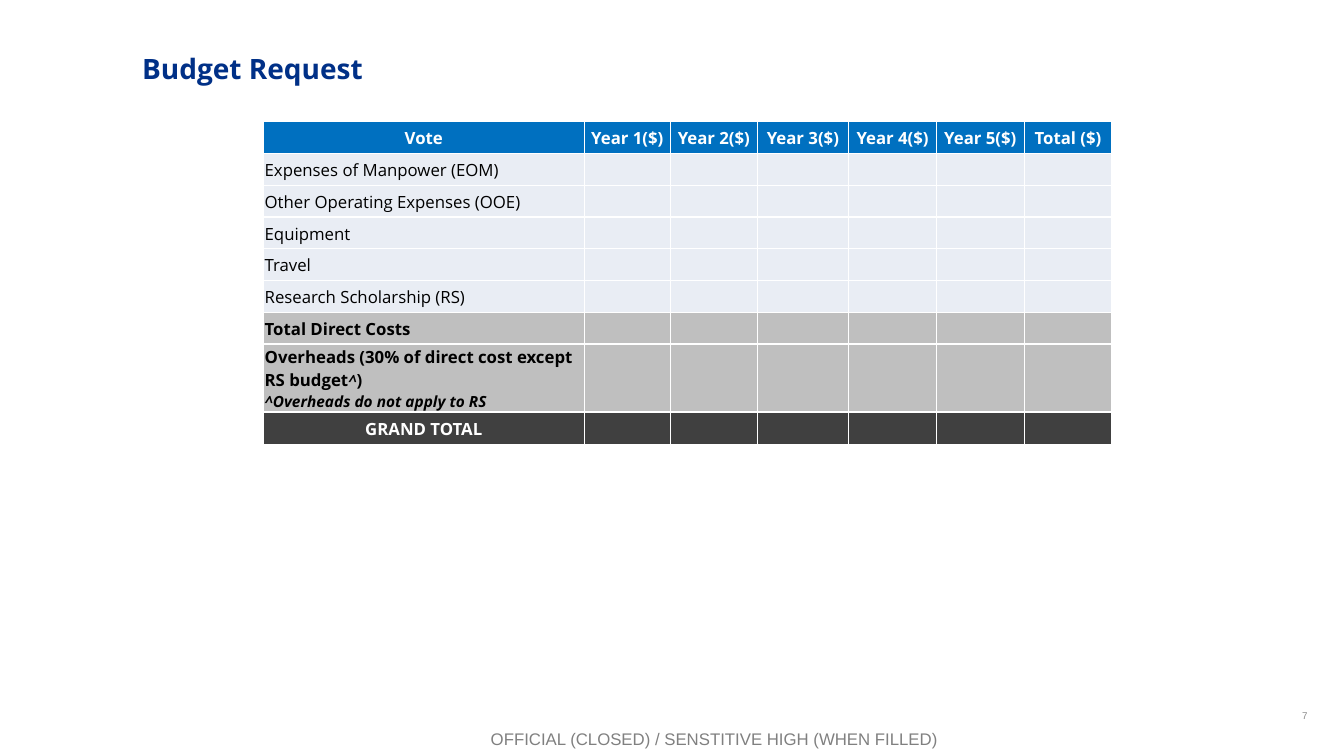
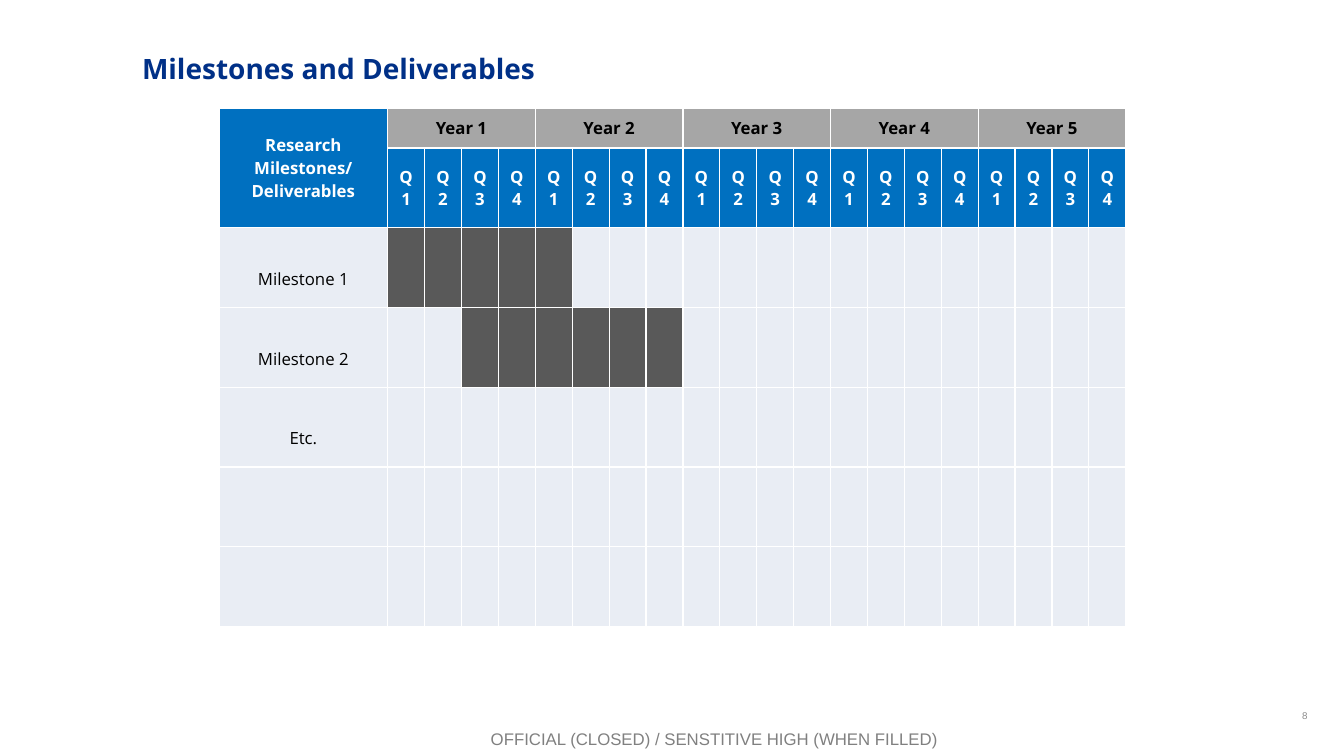
from lxml.etree import SubElement
from pptx import Presentation
from pptx.dml.color import RGBColor
from pptx.enum.text import MSO_ANCHOR as ANCHOR, PP_ALIGN as ALIGN
from pptx.oxml.ns import qn
from pptx.util import Cm, Pt

HEAD_FONT, FOOT_FONT = "Open Sans", "Arial"
WHITE, BLACK, NAVY, BLUE = "FFFFFF", "000000", "003087", "0070C0"
PALE, SILVER, GREY, CHARCOAL, BAR = "E9EDF4", "BFBFBF", "A6A6A6", "404040", "595959"
FOOT_GREY, NUMBER_GREY = "808080", "8C8C8C"
FOOTER = "OFFICIAL (CLOSED) / SENSTITIVE HIGH (WHEN FILLED)"

BUDGET_HEADS = ["Vote"] + [f"Year {n}($)" for n in range(1, 6)] + ["Total ($)"]
BUDGET_COLS = [8.08, 2.18, 2.18, 2.31, 2.21, 2.21, 2.21]
VOTES = [
    "Expenses of Manpower (EOM)",
    "Other Operating Expenses (OOE)",
    "Equipment",
    "Travel",
    "Research Scholarship (RS)",
]
OVERHEADS = [
    [("Overheads (30% of direct cost except RS budget", 12, False), ("^", 11, True), (")", 12, False)],
    [("^Overheads do not apply to RS", 11, True)],
]
BUDGET_ROWS = [(v, PALE, BLACK, False, ALIGN.LEFT, 0.8) for v in VOTES] + [
    ("Total Direct Costs", SILVER, BLACK, True, ALIGN.LEFT, 0.8),
    (OVERHEADS, SILVER, BLACK, True, ALIGN.LEFT, 1.71),
    ("GRAND TOTAL", CHARCOAL, WHITE, True, ALIGN.CENTER, 0.83),
]
BUDGET_INSETS = (0.03, 0.03, 0.03, 0)

YEARS, QUARTERS = 5, 4
PLAN_HEADS = ["Research", "Milestones/", "Deliverables"]
MILESTONES = [
    ("Milestone 1", range(1, 6)),
    ("Milestone 2", range(3, 9)),
    ("Etc.", ()),
    ("", ()),
    ("", ()),
]
PLAN_INSETS = (0.18, 0, 0.18, 0)
MILESTONE_INSETS = (0.18, 0.57, 0.18, 0)


def rgb(value):
    return RGBColor.from_string(value)


def style(font, size, color, bold=False, name=HEAD_FONT):
    font.name, font.size, font.bold = name, Pt(size), bold
    font.color.rgb = rgb(color)


def add_text(s, box, text, size, color, name, align=ALIGN.LEFT, bold=False, anchor=ANCHOR.TOP):
    tf = s.shapes.add_textbox(*map(Cm, box)).text_frame
    tf.word_wrap, tf.vertical_anchor = True, anchor
    p = tf.paragraphs[0]
    p.text, p.alignment = text, align
    style(p.font, size, color, bold, name)
    return p


def add_slide(prs, title, number):
    s = prs.slides.add_slide(prs.slide_layouts[6])
    add_text(s, (25.3, 17.53, 7.9, 1.02), str(number), 7, NUMBER_GREY, FOOT_FONT,
             ALIGN.RIGHT, anchor=ANCHOR.MIDDLE)
    add_text(s, (3.33, 1.27, 29.34, 1.47), title, 20, NAVY, HEAD_FONT, bold=True).line_spacing = 0.9
    add_text(s, (6.6, 18.24, 22.81, 0.76), FOOTER, 12, FOOT_GREY, FOOT_FONT, ALIGN.CENTER)
    return s


def add_grid(s, left, top, widths, heights):
    table = s.shapes.add_table(len(heights), len(widths), Cm(left), Cm(top),
                               Cm(sum(widths)), Cm(sum(heights))).table
    for col, width in zip(table.columns, widths):
        col.width = Cm(width)
    for row, height in zip(table.rows, heights):
        row.height = Cm(height)
    for cell in table.iter_cells():
        tc_pr = cell._tc.get_or_add_tcPr()
        for side in ("lnL", "lnR", "lnT", "lnB"):
            line = SubElement(tc_pr, qn("a:" + side), w=str(Pt(1)))
            SubElement(SubElement(line, qn("a:solidFill")), qn("a:srgbClr"), val=WHITE)
        set_cell(cell, PALE)
    return table


def set_cell(cell, fill, lines=(), color=BLACK, bold=False, align=ALIGN.CENTER, insets=(0, 0, 0, 0)):
    cell.fill.solid()
    cell.fill.fore_color.rgb = rgb(fill)
    cell.vertical_anchor = ANCHOR.MIDDLE
    cell.margin_left, cell.margin_top, cell.margin_right, cell.margin_bottom = map(Cm, insets)
    tf = cell.text_frame
    for i, line in enumerate([lines] if isinstance(lines, str) else lines):
        p = tf.add_paragraph() if i else tf.paragraphs[0]
        p.alignment = align
        style(p.font, 12, color, bold)
        if isinstance(line, str):
            p.text = line
            continue
        for text, size, italic in line:
            r = p.add_run()
            r.text = text
            r.font.size, r.font.italic = Pt(size), italic


def build_budget(prs):
    s = add_slide(prs, "Budget Request", 7)
    table = add_grid(s, 6.64, 3.07, BUDGET_COLS, [0.8] + [row[-1] for row in BUDGET_ROWS])
    for c, head in enumerate(BUDGET_HEADS):
        set_cell(table.cell(0, c), BLUE, head, WHITE, True, insets=BUDGET_INSETS)
    for r, (label, fill, color, bold, align, _) in enumerate(BUDGET_ROWS, 1):
        set_cell(table.cell(r, 0), fill, label, color, bold, align, BUDGET_INSETS)
        for c in range(1, len(BUDGET_COLS)):
            set_cell(table.cell(r, c), fill)


def build_milestones(prs):
    s = add_slide(prs, "Milestones and Deliverables", 8)
    count = YEARS * QUARTERS
    table = add_grid(s, 5.52, 2.74, [4.25] + [0.93] * count, [0.99] + [2.01] * (len(MILESTONES) + 1))
    table.cell(0, 0).merge(table.cell(1, 0))
    set_cell(table.cell(0, 0), BLUE, PLAN_HEADS, WHITE, True, insets=PLAN_INSETS)
    for year in range(YEARS):
        first = 1 + year * QUARTERS
        table.cell(0, first).merge(table.cell(0, first + QUARTERS - 1))
        set_cell(table.cell(0, first), GREY, f"Year {year + 1}", BLACK, True, insets=PLAN_INSETS)
        for q in range(QUARTERS):
            set_cell(table.cell(1, first + q), BLUE, f"Q{q + 1}", WHITE, True, insets=PLAN_INSETS)
    for r, (label, busy) in enumerate(MILESTONES, 2):
        if label:
            set_cell(table.cell(r, 0), PALE, label, insets=MILESTONE_INSETS)
        for c in busy:
            set_cell(table.cell(r, c), BAR)


def main():
    prs = Presentation()
    prs.slide_width, prs.slide_height = Cm(33.87), Cm(19.05)
    build_budget(prs)
    build_milestones(prs)
    prs.save("out.pptx")


if __name__ == "__main__":
    main()
